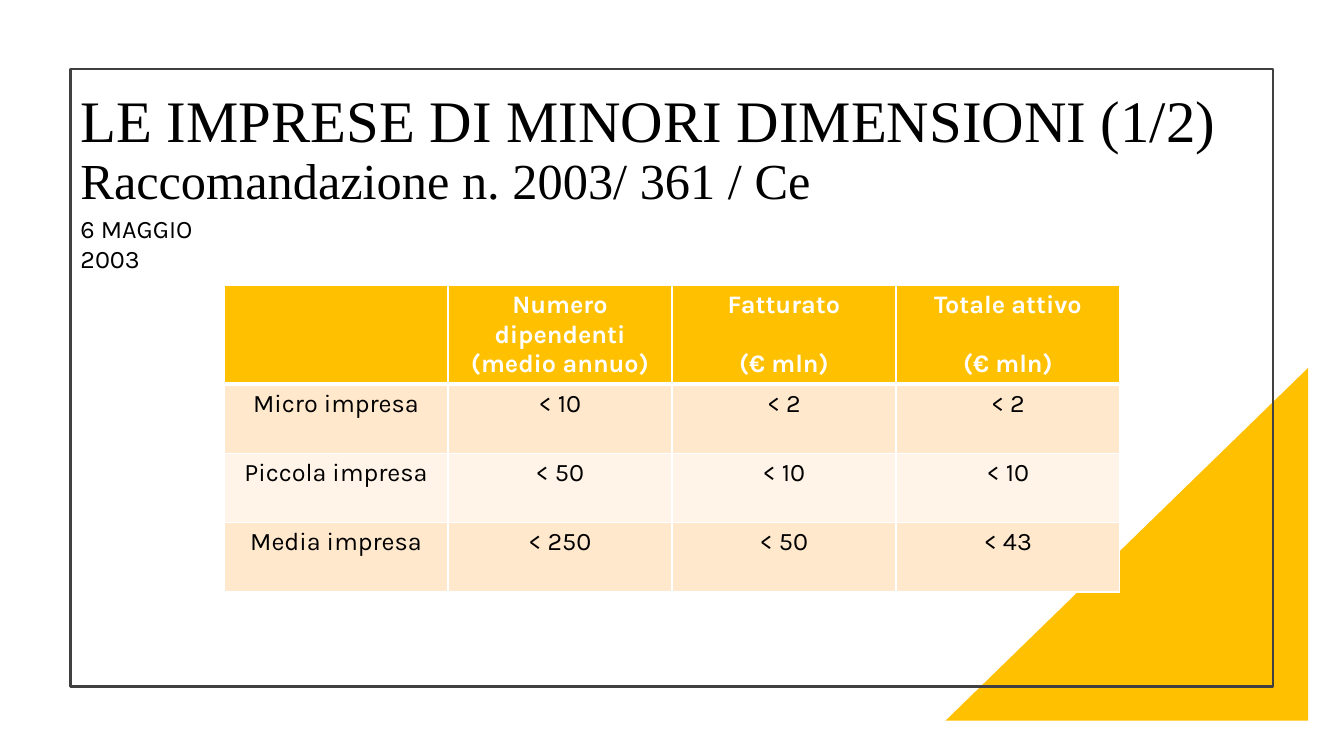
"""Build the slide on the size classes of small firms."""
from dataclasses import dataclass

from lxml.etree import SubElement as Sub
from pptx import Presentation
from pptx.dml.color import RGBColor as Rgb
from pptx.enum.shapes import MSO_SHAPE as Kind
from pptx.enum.text import MSO_ANCHOR as Anchor, PP_ALIGN as Align
from pptx.oxml.ns import qn
from pptx.util import Pt

HUES = {
    "gold": "FFC000",
    "peach": "FFE8CC",
    "cream": "FFF4E7",
    "frame": "404040",
    "black": "000000",
    "white": "FFFFFF",
}
SERIF, SANS = "Times New Roman", "Karla"
COL, HEAD, ROW = 160, 70, 49.5


@dataclass
class Box:
    x: float
    y: float
    w: float
    h: float

    def pts(self) -> tuple:
        return Pt(self.x), Pt(self.y), Pt(self.w), Pt(self.h)


@dataclass
class Label:
    text: str
    box: Box
    size: float
    font: str
    anchor: Anchor = Anchor.BOTTOM
    pitch: float = 0.9


LABELS = [
    Label("LE IMPRESE DI MINORI DIMENSIONI (1/2)",
          Box(50.4, 38.2, 884, 76.3), 42, SERIF),
    Label("Raccomandazione n. 2003/ 361 / Ce",
          Box(50.4, 77.8, 811.4, 76.3), 36, SERIF),
    Label("6 MAGGIO 2003",
          Box(50.4, 149, 130, 50), 18, SANS, Anchor.TOP, 1),
]
ROWS = [
    ["", "Numero dipendenti\n(medio annuo)", "Fatturato\n(€ mln)",
     "Totale attivo\n(€ mln)"],
    ["Micro impresa", "< 10", "< 2", "< 2"],
    ["Piccola impresa", "< 50", "< 10", "< 10"],
    ["Media impresa", "< 250", "< 50", "< 43"],
]


def tint(name: str) -> Rgb:
    return Rgb.from_string(HUES[name])


def write(frame, text: str, *, size=18, font=SANS, hue="black", bold=False,
          align=Align.LEFT, pitch=1.0, gap=0.0) -> None:
    for i, line in enumerate(text.split("\n")):
        para = frame.paragraphs[0] if i == 0 else frame.add_paragraph()
        para.alignment, para.line_spacing = align, pitch
        if i and gap:
            para.space_before = Pt(gap)
        run = para.add_run()
        run.text = line
        run.font.size, run.font.name, run.font.bold = Pt(size), font, bold
        run.font.color.rgb = tint(hue)


def shape(slide, kind: Kind, box: Box, fill: str = "", line: str = ""):
    item = slide.shapes.add_shape(kind, *box.pts())
    item.shadow.inherit = False
    if fill:
        item.fill.solid()
        item.fill.fore_color.rgb = tint(fill)
    else:
        item.fill.background()
    if line:
        item.line.color.rgb = tint(line)
        item.line.width = Pt(1.5)
    else:
        item.line.fill.background()
    return item


def label(slide, item: Label) -> None:
    frame = slide.shapes.add_textbox(*item.box.pts()).text_frame
    frame.word_wrap = True
    frame.vertical_anchor = item.anchor
    write(frame, item.text, size=item.size, font=item.font, pitch=item.pitch)


def edge(cell, top: float, base: float) -> None:
    props = cell._tc.get_or_add_tcPr()
    for side, width in zip("LRTB", (1, 1, top, base)):
        line = Sub(props, qn(f"a:ln{side}"), w=str(Pt(width)))
        fill = Sub(line, qn("a:solidFill"))
        Sub(fill, qn("a:srgbClr"), val=HUES["white"])


def table(slide, x: float, y: float) -> None:
    box = Box(x, y, COL * len(ROWS[0]), HEAD + ROW * (len(ROWS) - 1))
    grid = slide.shapes.add_table(len(ROWS), len(ROWS[0]), *box.pts()).table
    for col in grid.columns:
        col.width = Pt(COL)
    for r, row in enumerate(ROWS):
        head = r == 0
        grid.rows[r].height = Pt(HEAD if head else ROW)
        for c, text in enumerate(row):
            cell = grid.cell(r, c)
            edge(cell, 3 if r == 1 else 1, 3 if head else 1)
            cell.fill.solid()
            cell.fill.fore_color.rgb = tint(
                "gold" if head else "peach" if r % 2 else "cream")
            if text:
                write(cell.text_frame, text, bold=head, align=Align.CENTER,
                      hue="white" if head else "black",
                      gap=21 if c > 1 else 0)


def main() -> None:
    deck = Presentation()
    deck.slide_width, deck.slide_height = Pt(960), Pt(540)
    slide = deck.slides.add_slide(deck.slide_layouts[6])
    wedge = shape(slide, Kind.RIGHT_TRIANGLE, Box(675.4, 262.8, 259, 252),
                  fill="gold")
    wedge._element.spPr.get_or_add_xfrm().set("flipH", "1")
    shape(slide, Kind.RECTANGLE, Box(50.4, 49, 859, 441.4), line="frame")
    table(slide, 160, 203.8)
    for item in LABELS:
        label(slide, item)
    deck.save("out.pptx")


if __name__ == "__main__":
    main()
